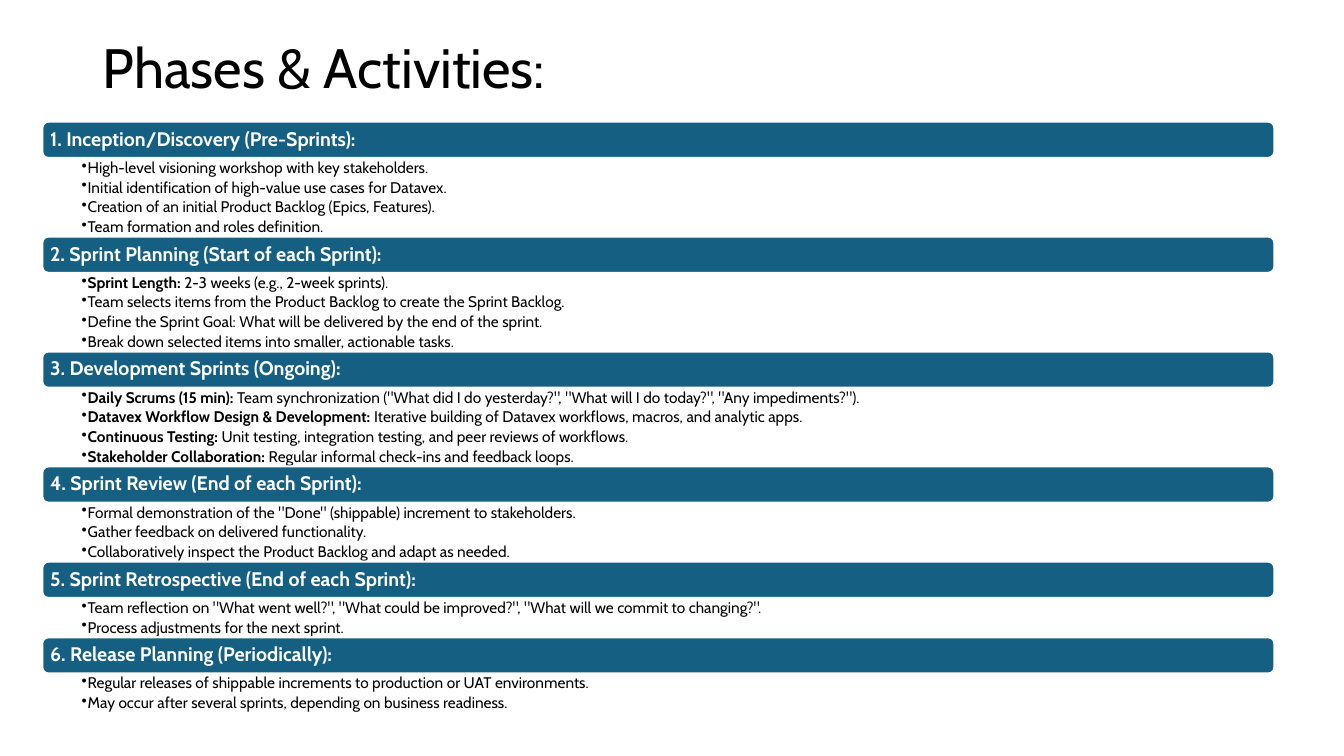
import pptx
import pptx.dml.color
import pptx.enum.shapes
import pptx.enum.text
import pptx.oxml.ns
import pptx.util

COLORS = {"bar": "156082", "bar_text": "FFFFFF", "bar_line": "FFFFFF", "text": "000000"}
FONT = "Cabin"
SLIDE_WIDTH = pptx.util.Inches(13.33)
SLIDE_HEIGHT = pptx.util.Inches(7.5)

# Shares of the slide's size, in percent
TITLE_BOX = (6.9, 5.33, 86.27, 7.87)
PHASES_BOX = (3.15, 16.1, 91.67)
BAR_HEIGHT = 4.8
ACTIVITY_HEIGHT = 2.6

# Each activity is a plain text or a pair of bold lead and text
PHASES = [
    ("1. Inception/Discovery (Pre-Sprints):", [
        "High-level visioning workshop with key stakeholders.",
        "Initial identification of high-value use cases for Datavex.",
        "Creation of an initial Product Backlog (Epics, Features).",
        "Team formation and roles definition.",
    ]),
    ("2. Sprint Planning (Start of each Sprint):", [
        ("Sprint Length:", " 2-3 weeks (e.g., 2-week sprints)."),
        "Team selects items from the Product Backlog to create the Sprint Backlog.",
        "Define the Sprint Goal: What will be delivered by the end of the sprint.",
        "Break down selected items into smaller, actionable tasks.",
    ]),
    ("3. Development Sprints (Ongoing):", [
        ("Daily Scrums (15 min):",
         ' Team synchronization ("What did I do yesterday?", "What will I do today?", "Any impediments?").'),
        ("Datavex Workflow Design & Development:",
         " Iterative building of Datavex workflows, macros, and analytic apps."),
        ("Continuous Testing:", " Unit testing, integration testing, and peer reviews of workflows."),
        ("Stakeholder Collaboration:", " Regular informal check-ins and feedback loops."),
    ]),
    ("4. Sprint Review (End of each Sprint):", [
        'Formal demonstration of the "Done" (shippable) increment to stakeholders.',
        "Gather feedback on delivered functionality.",
        "Collaboratively inspect the Product Backlog and adapt as needed.",
    ]),
    ("5. Sprint Retrospective (End of each Sprint):", [
        'Team reflection on "What went well?", "What could be improved?", "What will we commit to changing?".',
        "Process adjustments for the next sprint.",
    ]),
    ("6. Release Planning (Periodically):", [
        "Regular releases of shippable increments to production or UAT environments.",
        "May occur after several sprints, depending on business readiness.",
    ]),
]


def place(left, top, width, height):
    """Turn percent shares of the slide into lengths."""
    return (int(SLIDE_WIDTH * left / 100), int(SLIDE_HEIGHT * top / 100),
            int(SLIDE_WIDTH * width / 100), int(SLIDE_HEIGHT * height / 100))


def color(name):
    return pptx.dml.color.RGBColor.from_string(COLORS[name])


def set_bullet(paragraph):
    properties = paragraph._p.get_or_add_pPr()
    indent = pptx.util.Inches(0.06)
    properties.set("marL", str(indent))
    properties.set("indent", str(-indent))
    bullet = properties.makeelement(pptx.oxml.ns.qn("a:buChar"), {"char": "•"})
    properties.append(bullet)


def write_text(shape, lines, size, text_color="text", bold=False, bullets=False,
               middle=False, space_after=0, insets=(0.1, 0.05, 0.1, 0.05)):
    """Fill a shape with paragraphs; a line given as a pair starts with a bold lead."""
    frame = shape.text_frame
    frame.word_wrap = True
    anchor = pptx.enum.text.MSO_ANCHOR
    frame.vertical_anchor = anchor.MIDDLE if middle else anchor.TOP
    (frame.margin_left, frame.margin_top,
     frame.margin_right, frame.margin_bottom) = map(pptx.util.Inches, insets)
    for index, line in enumerate(lines):
        paragraph = frame.add_paragraph() if index else frame.paragraphs[0]
        paragraph.alignment = pptx.enum.text.PP_ALIGN.LEFT
        paragraph.line_spacing = 0.9
        paragraph.space_after = pptx.util.Pt(space_after)
        if bullets:
            set_bullet(paragraph)
        parts = [(line, bold)] if isinstance(line, str) else [(line[0], True), (line[1], bold)]
        for text, is_bold in parts:
            run = paragraph.add_run()
            run.text = text
            run.font.name = FONT
            run.font.size = pptx.util.Pt(size)
            run.font.bold = is_bold
            run.font.color.rgb = color(text_color)


def add_title(slide, box, text):
    title = slide.shapes.add_textbox(*place(*box))
    write_text(title, [text], size=39.6, middle=True)


def add_phase(slide, left, top, width, heading, activities):
    """Draw a heading bar with its activities below and return the bottom edge."""
    bar = slide.shapes.add_shape(pptx.enum.shapes.MSO_SHAPE.ROUNDED_RECTANGLE,
                                 *place(left, top, width, BAR_HEIGHT))
    bar.shadow.inherit = False
    bar.fill.solid()
    bar.fill.fore_color.rgb = color("bar")
    bar.line.color.rgb = color("bar_line")
    bar.line.width = pptx.util.Pt(1.5)
    write_text(bar, [heading], size=14, text_color="bar_text", bold=True, middle=True,
               insets=(0.06, 0.06, 0.06, 0.06))

    list_top = top + BAR_HEIGHT
    list_height = ACTIVITY_HEIGHT * len(activities)
    activity_list = slide.shapes.add_textbox(*place(left, list_top, width, list_height))
    write_text(activity_list, activities, size=11, bullets=True, space_after=2.2,
               insets=(0.39, 0.02, 0.11, 0.02))
    return list_top + list_height


def add_phases(slide, box, phases):
    left, top, width = box
    for heading, activities in phases:
        top = add_phase(slide, left, top, width, heading, activities)


def main():
    presentation = pptx.Presentation()
    presentation.slide_width = SLIDE_WIDTH
    presentation.slide_height = SLIDE_HEIGHT
    slide = presentation.slides.add_slide(presentation.slide_layouts[6])
    add_title(slide, TITLE_BOX, "Phases & Activities:")
    add_phases(slide, PHASES_BOX, PHASES)
    presentation.save("out.pptx")


if __name__ == "__main__":
    main()
